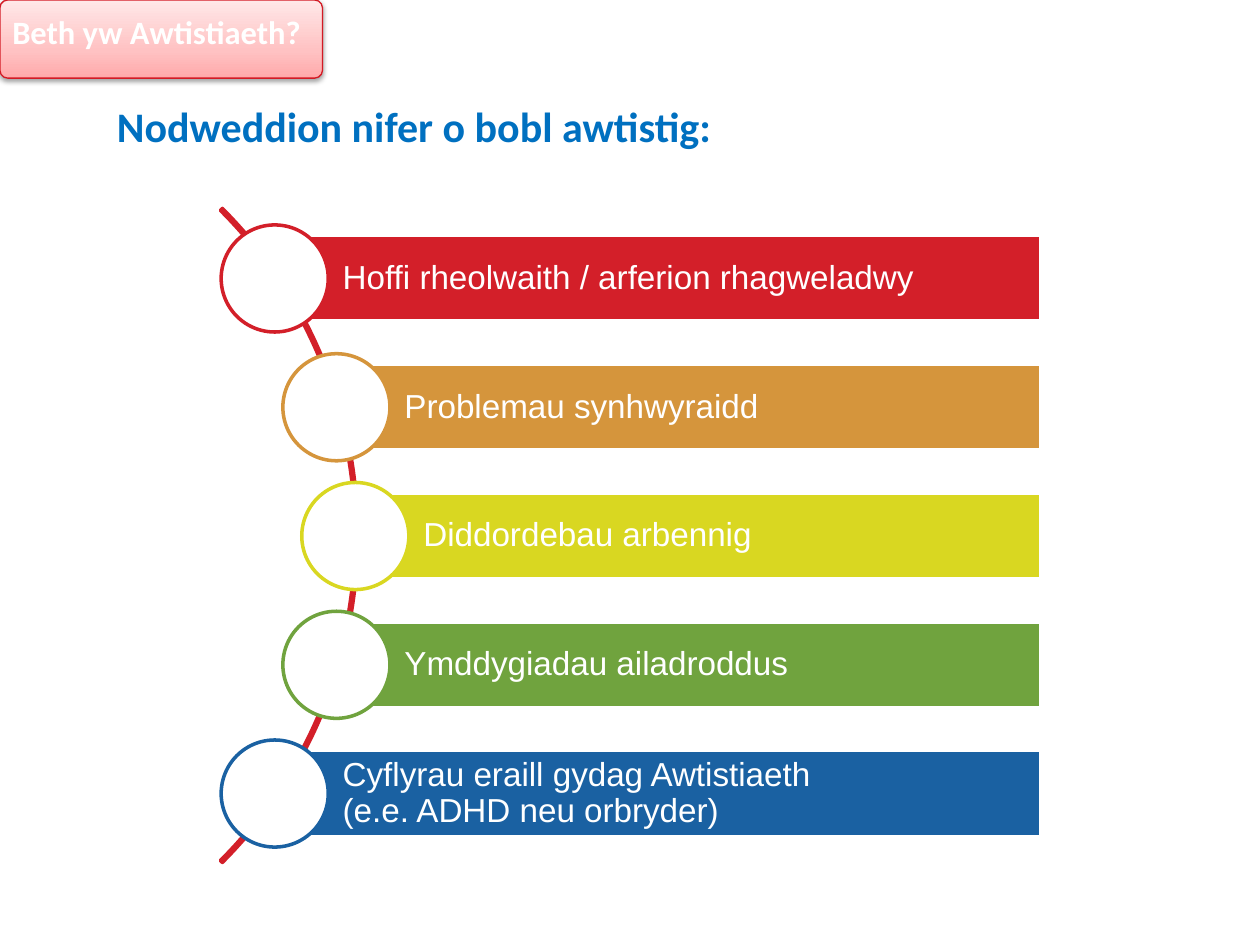
from lxml import etree
from pptx import Presentation
from pptx.dml.color import RGBColor
from pptx.enum import shapes, text
from pptx.oxml import parse_xml
from pptx.oxml.ns import nsdecls
from pptx.util import Inches, Pt

COLORS = {
    "white": "FFFFFF", "red": "D31F29", "orange": "D5953C", "yellow": "D9D721",
    "green": "70A33E", "blue": "1A61A2", "title": "0070C0", "edge": "D31A24",
}
KIND = shapes.MSO_SHAPE

deck = Presentation()
deck.slide_width, deck.slide_height = Inches(10), Inches(7.5)
slide = deck.slides.add_slide(deck.slide_layouts[6])


def add_shape(kind, left, top, width, height, line, fill=None, weight=2):
    shape = slide.shapes.add_shape(
        kind, Inches(left), Inches(top), Inches(width), Inches(height))
    shape.shadow.inherit = False
    if fill:
        shape.fill.solid()
        shape.fill.fore_color.rgb = RGBColor.from_string(COLORS[fill])
    else:
        shape.fill.background()
    shape.line.color.rgb = RGBColor.from_string(COLORS[line])
    shape.line.width = Pt(weight)
    return shape


def write(shape, words, font, size, color, bold, anchor, insets):
    """Fill the shape with one left-aligned paragraph; insets run left, top, right, bottom."""
    frame = shape.text_frame
    frame.word_wrap = True
    frame.vertical_anchor = anchor
    (frame.margin_left, frame.margin_top,
     frame.margin_right, frame.margin_bottom) = map(Inches, insets)
    frame.text = words
    para = frame.paragraphs[0]
    para.alignment = text.PP_ALIGN.LEFT
    para.font.name, para.font.size, para.font.bold = font, Pt(size), bold
    para.font.color.rgb = RGBColor.from_string(COLORS[color])
    return para


# Curve behind the list
arc = add_shape(KIND.BLOCK_ARC, -4.5, 0.58, 7.34, 7.34, "red")
arc.adjustments[0], arc.adjustments[1], arc.adjustments[2] = 189, 27, 0.003

# Traits: bar and circle, stepping along the curve
traits = [
    ("Hoffi rheolwaith / arferion rhagweladwy", "red", 2.18),
    ("Problemau synhwyraidd", "orange", 2.67),
    ("Diddordebau arbennig", "yellow", 2.82),
    ("Ymddygiadau ailadroddus", "green", 2.67),
    ("Cyflyrau eraill gydag Awtistiaeth\v(e.e. ADHD neu orbryder)", "blue", 2.18),
]
RIGHT, TOP, STEP, BAR, RING = 8.26, 1.87, 1.022, 0.68, 0.85
for row, (words, color, left) in enumerate(traits):
    top = TOP + row * STEP
    bar = add_shape(KIND.RECTANGLE, left, top, RIGHT - left, BAR, "white", color)
    para = write(bar, words, "Arial", 19, "white", False,
                 text.MSO_ANCHOR.MIDDLE, (0.54, 0.05, 0.05, 0.05))
    para.line_spacing = 0.9
    add_shape(KIND.OVAL, left - RING / 2, top + (BAR - RING) / 2, RING, RING, color, "white")

# Heading
head = slide.shapes.add_textbox(Inches(0.83), Inches(0.75), Inches(8.35), Inches(0.5))
write(head, "Nodweddion nifer o bobl awtistig:", "Calibri", 24, "title", True,
      text.MSO_ANCHOR.TOP, (0.1, 0.05, 0.1, 0.05))

# Corner tab with a three-stop gradient and a soft shadow
tab = add_shape(KIND.ROUNDED_RECTANGLE, 0, 0, 2.56, 0.62, "edge", weight=0.75)
tab.adjustments[0] = 0.1
write(tab, "Beth yw Awtistiaeth?", "Calibri", 18.6, "white", True,
      text.MSO_ANCHOR.TOP, (0.08, 0.08, 0.05, 0.05))
stops = "".join(
    f'<a:gs pos="{place * 1000}"><a:srgbClr val="{tint}"/></a:gs>'
    for place, tint in [(0, "FFA9AA"), (35, "FFC2C3"), (100, "FFE8E8")])
props = tab.fill._xPr
props.replace(props.find("{*}noFill"), parse_xml(
    f'<a:gradFill {nsdecls("a")} rotWithShape="1"><a:gsLst>{stops}</a:gsLst>'
    '<a:lin ang="16200000" scaled="0"/></a:gradFill>'))
props.find("{*}effectLst").append(parse_xml(
    f'<a:outerShdw {nsdecls("a")} blurRad="{Pt(3.1)}" dist="{Pt(1.6)}" dir="5400000" '
    'rotWithShape="0"><a:srgbClr val="000000"><a:alpha val="38000"/></a:srgbClr></a:outerShdw>'))

deck.save("out.pptx")
